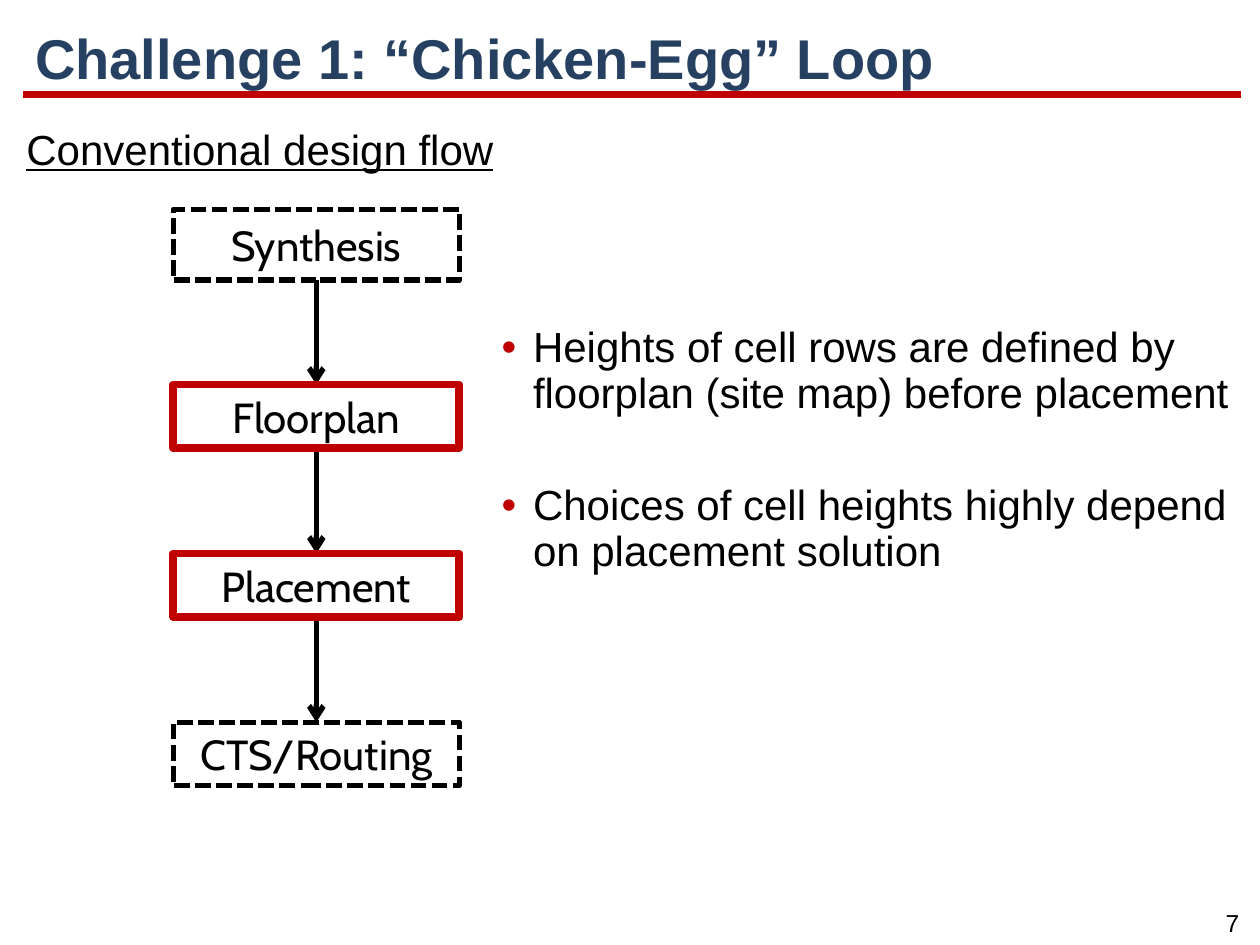
from dataclasses import dataclass
from itertools import pairwise

from lxml.etree import SubElement
from pptx import Presentation
from pptx.dml.color import RGBColor
from pptx.enum.dml import MSO_LINE
from pptx.enum.shapes import MSO_CONNECTOR, MSO_SHAPE
from pptx.enum.text import MSO_ANCHOR, PP_ALIGN
from pptx.oxml.ns import qn
from pptx.util import Pt


@dataclass(frozen=True)
class Theme:
    black: RGBColor = RGBColor(0, 0, 0)
    white: RGBColor = RGBColor(255, 255, 255)
    red: RGBColor = RGBColor(0xC0, 0, 0)
    navy: RGBColor = RGBColor(0x25, 0x40, 0x61)
    sans: str = "Arial"
    label: str = "Cabin"
    title: int = 32
    body: int = 24
    small: int = 14
    thin: float = 3
    thick: float = 4.5


theme = Theme()


def write(shape, text, size=theme.body, face=theme.sans, color=theme.black,
          align=PP_ALIGN.LEFT, anchor=MSO_ANCHOR.TOP):
    """Set the text, one paragraph a line, and return its frame."""
    frame = shape.text_frame
    frame.text = text
    frame.word_wrap = True
    frame.vertical_anchor = anchor
    for para in frame.paragraphs:
        para.alignment = align
        for run in para.runs:
            run.font.size = Pt(size)
            run.font.name = face
            run.font.color.rgb = color
    return frame


def rule(start, end, width, color):
    """Draw a straight line without shadow and return its line element."""
    line = slide.shapes.add_connector(
        MSO_CONNECTOR.STRAIGHT, *(Pt(v) for v in (*start, *end)))
    line.line.width = Pt(width)
    line.line.color.rgb = color
    props = line._element.spPr
    SubElement(props, qn("a:effectLst"))
    return props.find(qn("a:ln"))


deck = Presentation()
deck.slide_width, deck.slide_height = Pt(720), Pt(540)
slide = deck.slides.add_slide(deck.slide_layouts[6])
shapes = slide.shapes

# Title, rule and page number
rule((13, 54), (709, 54), theme.thick, theme.red)
title = shapes.add_textbox(Pt(13), Pt(11.5), Pt(697), Pt(47))
frame = write(title, "Challenge 1: “Chicken-Egg” Loop", theme.title,
              color=theme.navy, anchor=MSO_ANCHOR.MIDDLE)
frame.paragraphs[0].line_spacing = 0.9
frame.paragraphs[0].runs[0].font.bold = True

page = shapes.add_textbox(Pt(688.5), Pt(515.5), Pt(31.5), Pt(24.5))
write(page, "7", theme.small, align=PP_ALIGN.CENTER).word_wrap = False

# Heading and bullets
head = shapes.add_textbox(Pt(8), Pt(67), Pt(304.5), Pt(49))
frame = write(head, "Conventional design flow")
frame.paragraphs[0].runs[0].font.underline = True

points = shapes.add_textbox(Pt(279.5), Pt(183), Pt(431), Pt(155.5))
frame = write(points, "Heights of cell rows are defined by floorplan (site map) "
                      "before placement\n"
                      "Choices of cell heights highly depend on placement solution")
for para, gap in zip(frame.paragraphs, (0, 38.5)):
    para.line_spacing = 0.9
    para.space_before = Pt(gap)
    props = para._p.get_or_add_pPr()
    props.set("marL", str(Pt(18)))
    props.set("indent", str(-Pt(18)))
    tint = SubElement(props, qn("a:buClr"))
    SubElement(tint, qn("a:srgbClr"), val=str(theme.red))
    SubElement(props, qn("a:buFont"), typeface=theme.sans)
    SubElement(props, qn("a:buChar"), char="•")

# Flow: name, top, height, key step
left, wide = 99, 163.5
steps = [("Synthesis", 119.5, 40.5, False)]
steps += [(name, 219.75 + 96.5 * i, 36.25, key) for i, (name, key) in enumerate(
    [("Floorplan", True), ("Placement", True), ("CTS/Routing", False)])]

mid = left + wide / 2
for (_, top, high, _), (_, below, _, _) in pairwise(steps):
    line = rule((mid, top + high), (mid, below), theme.thin, theme.black)
    SubElement(line, qn("a:tailEnd"), type="arrow")

for name, top, high, key in steps:
    box = shapes.add_shape(MSO_SHAPE.RECTANGLE, Pt(left), Pt(top), Pt(wide), Pt(high))
    box.shadow.inherit = False
    if key:
        box.fill.solid()
        box.fill.fore_color.rgb = theme.white
    else:
        box.fill.background()
        box.line.dash_style = MSO_LINE.SQUARE_DOT
    box.line.color.rgb = theme.red if key else theme.black
    box.line.width = Pt(theme.thick if key else theme.thin)
    write(box, name, face=theme.label, align=PP_ALIGN.CENTER, anchor=MSO_ANCHOR.MIDDLE)

deck.save("out.pptx")
